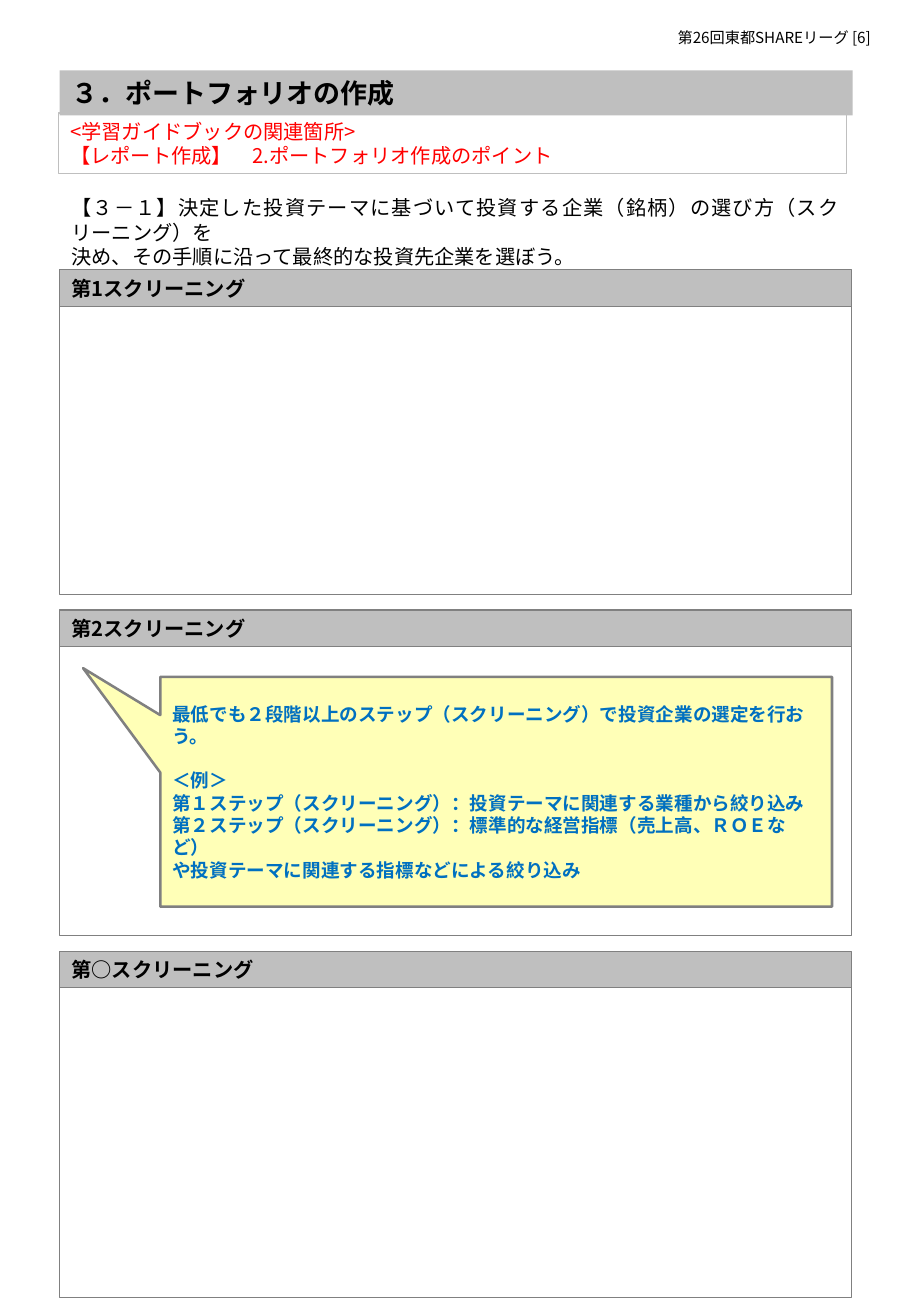
"""Build the portfolio worksheet page with its three screening sections."""
from pptx import Presentation
from pptx.dml.color import RGBColor
from pptx.enum.shapes import MSO_SHAPE as Shape
from pptx.enum.text import MSO_ANCHOR as Anchor, MSO_AUTO_SIZE as AutoSize, PP_ALIGN as Align
from pptx.oxml.ns import qn
from pptx.util import Inches, Pt

FONT = "Noto Sans CJK JP"
BLACK, RED, BLUE = "000000", "FF0000", "0070C0"
SILVER, GRAY, CREAM = "BFBFBF", "808080", "FFFFB7"
LEFT, WIDTH = 0.49, 6.52
BAR_HEIGHT, SECTION_GAP, FIRST_BAR = 0.3, 0.13, 2.22

PAGE_HEADER = ["第26回東都SHAREリーグ [6]"]
TITLE = ["３．ポートフォリオの作成"]
GUIDE = ["<学習ガイドブックの関連箇所>", "【レポート作成】　2.ポートフォリオ作成のポイント"]
TASK = [
    "【３－１】決定した投資テーマに基づいて投資する企業（銘柄）の選び方（スクリーニング）を",
    "決め、その手順に沿って最終的な投資先企業を選ぼう。",
]
SECTIONS = [("第1スクリーニング", 2.37), ("第2スクリーニング", 2.38), ("第○スクリーニング", 2.55)]
ADVICE = [
    "最低でも２段階以上のステップ（スクリーニング）で投資企業の選定を行おう。",
    "＜例＞",
    "第１ステップ（スクリーニング）：投資テーマに関連する業種から絞り込み",
    "第２ステップ（スクリーニング）：標準的な経営指標（売上高、ＲＯＥなど）",
    "や投資テーマに関連する指標などによる絞り込み",
]


def color(value):
    return RGBColor.from_string(value)


def write(box, lines, size, ink=BLACK, bold=False, align=Align.LEFT, anchor=Anchor.TOP):
    frame = box.text_frame
    frame.text = "\n".join(lines)
    frame.word_wrap = True
    frame.auto_size = AutoSize.NONE
    frame.vertical_anchor = anchor
    for para in frame.paragraphs:
        para.alignment = align
        para.line_spacing = Pt(size * 1.2)
        for span in para.runs:
            span.font.size = Pt(size)
            span.font.bold = bold
            span.font.name = FONT
            span.font.color.rgb = color(ink)
            east_asian = span.font._element.makeelement(qn("a:ea"), {"typeface": FONT})
            span.font._element.find(qn("a:latin")).addnext(east_asian)


def add_box(page, area, line, weight, fill=None, kind=Shape.RECTANGLE):
    box = page.shapes.add_shape(kind, *map(Inches, area))
    box.shadow.inherit = False
    if fill:
        box.fill.solid()
        box.fill.fore_color.rgb = color(fill)
    else:
        box.fill.background()
    box.line.color.rgb = color(line)
    box.line.width = Pt(weight)
    return box


def add_text(page, area, lines, size, **style):
    box = page.shapes.add_textbox(*map(Inches, area))
    write(box, lines, size, **style)


def add_title(page):
    title = page.shapes.title
    title.left, title.top, title.width, title.height = map(Inches, (LEFT, 0.58, 6.53, 0.37))
    title.fill.solid()
    title.fill.fore_color.rgb = color(SILVER)
    write(title, TITLE, 16, bold=True)


def add_sections(page):
    top = FIRST_BAR
    for heading, height in SECTIONS:
        bar = add_box(page, (LEFT, top, WIDTH, BAR_HEIGHT), GRAY, 0.75, SILVER)
        write(bar, [heading], 12, bold=True, anchor=Anchor.MIDDLE)
        top += BAR_HEIGHT
        add_box(page, (LEFT, top, WIDTH, height), GRAY, 0.5)
        top += height + SECTION_GAP


def add_advice(page):
    callout = add_box(page, (1.32, 5.57, 5.53, 1.89), GRAY, 1.5, CREAM,
                      Shape.RECTANGULAR_CALLOUT)
    callout.adjustments[0] = -0.615
    callout.adjustments[1] = -0.538
    write(callout, ADVICE, 11, ink=BLUE, bold=True, anchor=Anchor.MIDDLE)
    callout.text_frame.paragraphs[1].space_before = Pt(13.2)


def main():
    deck = Presentation()
    deck.slide_width, deck.slide_height = Inches(7.5), Inches(10.83)
    page = deck.slides.add_slide(deck.slide_layouts[5])
    add_text(page, (5.48, 0.18, 2.02, 0.25), PAGE_HEADER, 9)
    add_title(page)
    add_text(page, (LEFT, 1.56, WIDTH, 0.5), TASK, 12, align=Align.JUSTIFY)
    add_sections(page)
    add_advice(page)
    guide = add_box(page, (0.48, 0.93, 6.49, 0.5), SILVER, 0.75)
    write(guide, GUIDE, 12, ink=RED, align=Align.JUSTIFY)
    deck.save("out.pptx")


if __name__ == "__main__":
    main()
